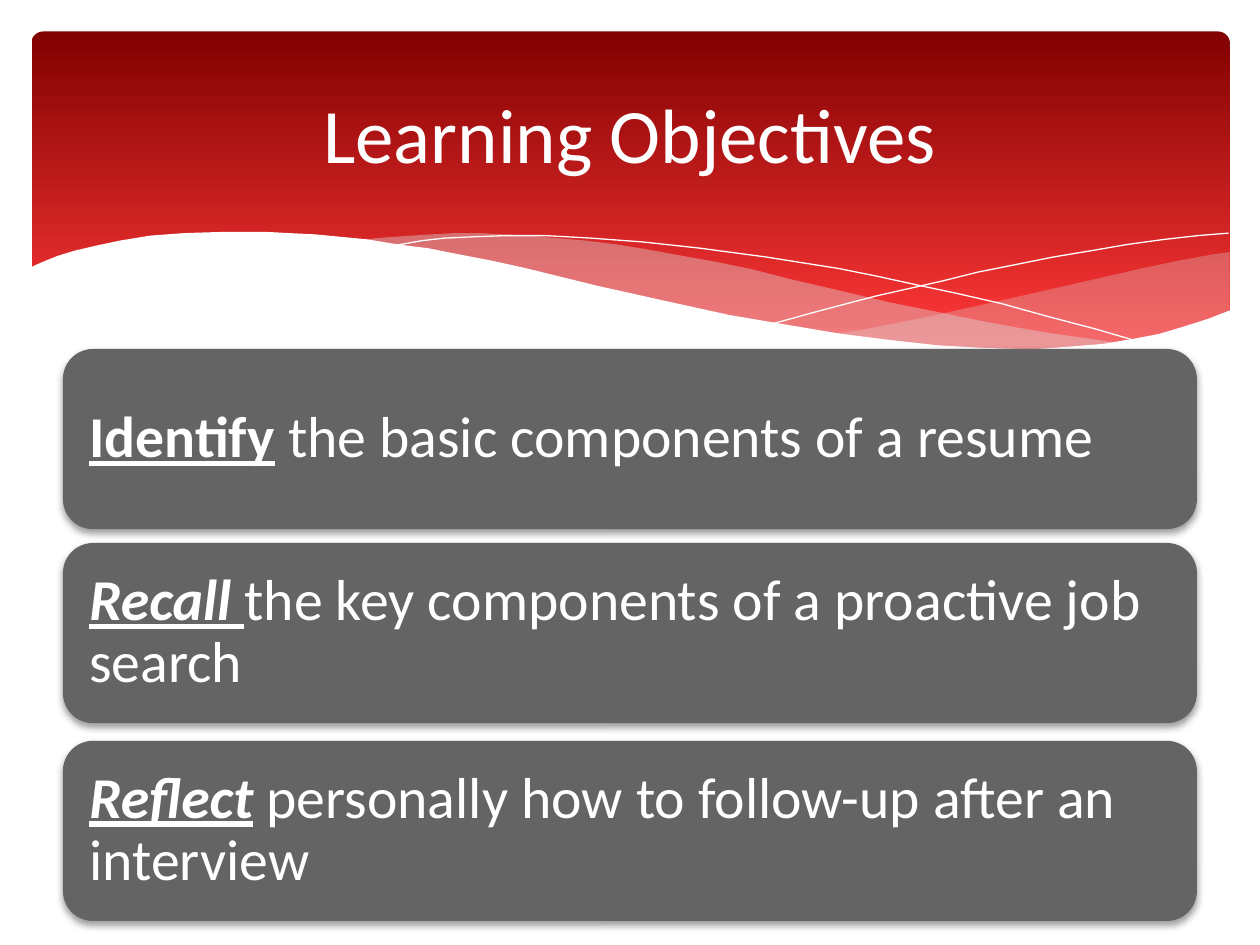
from lxml import etree
from pptx import Presentation
from pptx.dml.color import RGBColor
from pptx.enum.shapes import MSO_SHAPE as Shape
from pptx.enum.text import MSO_ANCHOR as Anchor, PP_ALIGN as Align
from pptx.oxml.ns import qn
from pptx.util import Inches, Pt

WHITE = RGBColor(0xFF, 0xFF, 0xFF)
DARK_RED = RGBColor(0x82, 0x01, 0x01)
BRIGHT_RED = RGBColor(0xFE, 0x37, 0x37)
MIST = RGBColor(0xDE, 0xDE, 0xE0)
GRAY = RGBColor(0x64, 0x64, 0x64)
BLACK = RGBColor(0x00, 0x00, 0x00)
FONT = "Calibri"

TITLE = "Learning Objectives"
OBJECTIVES = [
    ("Identify", " the basic components of a resume", False),
    ("Recall ", "the key components of a proactive job search", True),
    ("Reflect", " personally how to follow-up after an interview", True),
]
CARD_TOPS = [2.77, 4.31, 5.88]

# Wave points are hundredths of an inch.
RIGHT_WAVE = [
    (976, 200), (962, 202), (935, 207), (906, 213), (876, 220), (832, 230),
    (779, 242), (729, 253), (683, 262), (661, 265), (691, 269), (719, 272),
    (745, 275), (769, 277), (803, 278), (835, 277), (863, 275), (889, 272),
    (913, 267), (935, 262), (949, 257), (963, 252), (976, 247),
]
MIDDLE_WAVE = [
    (893, 273), (866, 269), (837, 265), (807, 260), (775, 254), (741, 247),
    (706, 240), (668, 231), (629, 222), (598, 214), (569, 208), (541, 203),
    (514, 198), (489, 194), (465, 191), (442, 189), (420, 187), (399, 186),
    (380, 185), (361, 185), (344, 186), (328, 187), (313, 188), (299, 189),
    (286, 191), (323, 196), (362, 203), (404, 211), (449, 222), (491, 232),
    (530, 240), (566, 248), (601, 255), (634, 261), (665, 266), (695, 270),
    (722, 274), (748, 276), (773, 277), (796, 278), (828, 278), (857, 277),
    (876, 275), (893, 273),
]
FALLING_CURVE = [
    (309, 195), (318, 194), (335, 191), (353, 189), (374, 188), (401, 187),
    (433, 187), (469, 189), (510, 192), (556, 197), (608, 204), (665, 213),
    (695, 219), (727, 226), (760, 233), (795, 241), (831, 251), (869, 261),
    (907, 272),
]
RISING_CURVE = [
    (613, 257), (653, 246), (695, 235), (748, 223), (776, 216), (806, 210),
    (836, 204), (866, 199), (895, 194), (924, 190), (951, 187), (975, 185),
]
WHITE_WAVE = [
    (977, 246), (959, 253), (940, 259), (920, 265), (899, 269), (875, 273),
    (850, 275), (823, 277), (809, 277), (778, 276), (744, 274), (708, 270),
    (668, 265), (626, 258), (579, 250), (529, 239), (475, 227), (418, 213),
    (391, 207), (365, 202), (340, 197), (316, 194), (292, 190), (271, 188),
    (250, 186), (230, 185), (211, 184), (177, 184), (146, 185), (119, 187),
    (95, 191), (76, 195), (59, 199), (46, 203), (36, 207), (29, 210),
    (23, 213), (23, 329), (977, 329),
]
WAVES = [
    (RIGHT_WAVE, MIST, 29),
    (MIDDLE_WAVE, MIST, 40),
    (FALLING_CURVE, None, None),
    (RISING_CURVE, None, None),
    (WHITE_WAVE, WHITE, 100),
]


def set_alpha(color_element, percent):
    etree.SubElement(color_element, qn("a:alpha"), val=str(percent * 1000))


def add_wave(page, points, color, opacity):
    builder = page.shapes.build_freeform(*points[0], scale=Inches(0.01))
    builder.add_line_segments(points[1:], close=color is not None)
    wave = builder.convert_to_shape()
    wave.shadow.inherit = False
    if color is None:
        wave.fill.background()
        wave.line.color.rgb = WHITE
        wave.line.width = Pt(0)
        return
    wave.fill.solid()
    wave.fill.fore_color.rgb = color
    wave.line.fill.background()
    if opacity < 100:
        set_alpha(wave.element.spPr.find(qn("a:solidFill"))[0], opacity)


def add_banner(page):
    banner = page.shapes.add_shape(
        Shape.ROUNDED_RECTANGLE, Inches(0.25), Inches(0.25), Inches(9.51), Inches(2.7))
    banner.adjustments[0] = 0.034
    banner.shadow.inherit = False
    banner.line.fill.background()
    banner.fill.gradient()
    banner.fill.gradient_angle = 270
    stops = zip(banner.fill.gradient_stops, [(0, DARK_RED), (0.9, BRIGHT_RED)])
    for stop, (position, color) in stops:
        stop.position = position
        stop.color.rgb = color


def add_span(para, text, size, strong=False, italic=False):
    span = para.add_run()
    span.text = text
    font = span.font
    font.name, font.size, font.color.rgb = FONT, Pt(size), WHITE
    font.bold, font.underline, font.italic = strong, strong, italic


def add_title(page):
    box = page.shapes.add_textbox(Inches(0.5), Inches(0.37), Inches(9), Inches(1.37))
    frame = box.text_frame
    frame.word_wrap = True
    frame.vertical_anchor = Anchor.MIDDLE
    para = frame.paragraphs[0]
    para.alignment = Align.CENTER
    add_span(para, TITLE, 44)


def add_card_shadow(card):
    card.shadow.inherit = False
    effects = card.element.spPr.find(qn("a:effectLst"))
    shadow = etree.SubElement(
        effects, qn("a:outerShdw"), blurRad=str(Pt(4)), dist=str(Pt(2)),
        dir=str(90 * 60000), rotWithShape="0")
    set_alpha(etree.SubElement(shadow, qn("a:srgbClr"), val=str(BLACK)), 38)


def add_card(page, top, verb, rest, italic):
    card = page.shapes.add_shape(
        Shape.ROUNDED_RECTANGLE, Inches(0.5), Inches(top), Inches(9), Inches(1.43))
    card.fill.solid()
    card.fill.fore_color.rgb = GRAY
    card.line.fill.background()
    add_card_shadow(card)
    frame = card.text_frame
    frame.word_wrap = True
    frame.vertical_anchor = Anchor.MIDDLE
    frame.margin_left = frame.margin_right = Inches(0.14)
    frame.margin_top = frame.margin_bottom = Inches(0.14)
    para = frame.paragraphs[0]
    para.alignment = Align.LEFT
    para.line_spacing = 0.9
    add_span(para, verb, 33, strong=True, italic=italic)
    add_span(para, rest, 33)


def main():
    deck = Presentation()
    deck.slide_width, deck.slide_height = Inches(10), Inches(7.5)
    page = deck.slides.add_slide(deck.slide_layouts[6])
    add_banner(page)
    for wave in WAVES:
        add_wave(page, *wave)
    add_title(page)
    for top, objective in zip(CARD_TOPS, OBJECTIVES):
        add_card(page, top, *objective)
    deck.save("out.pptx")


if __name__ == "__main__":
    main()
